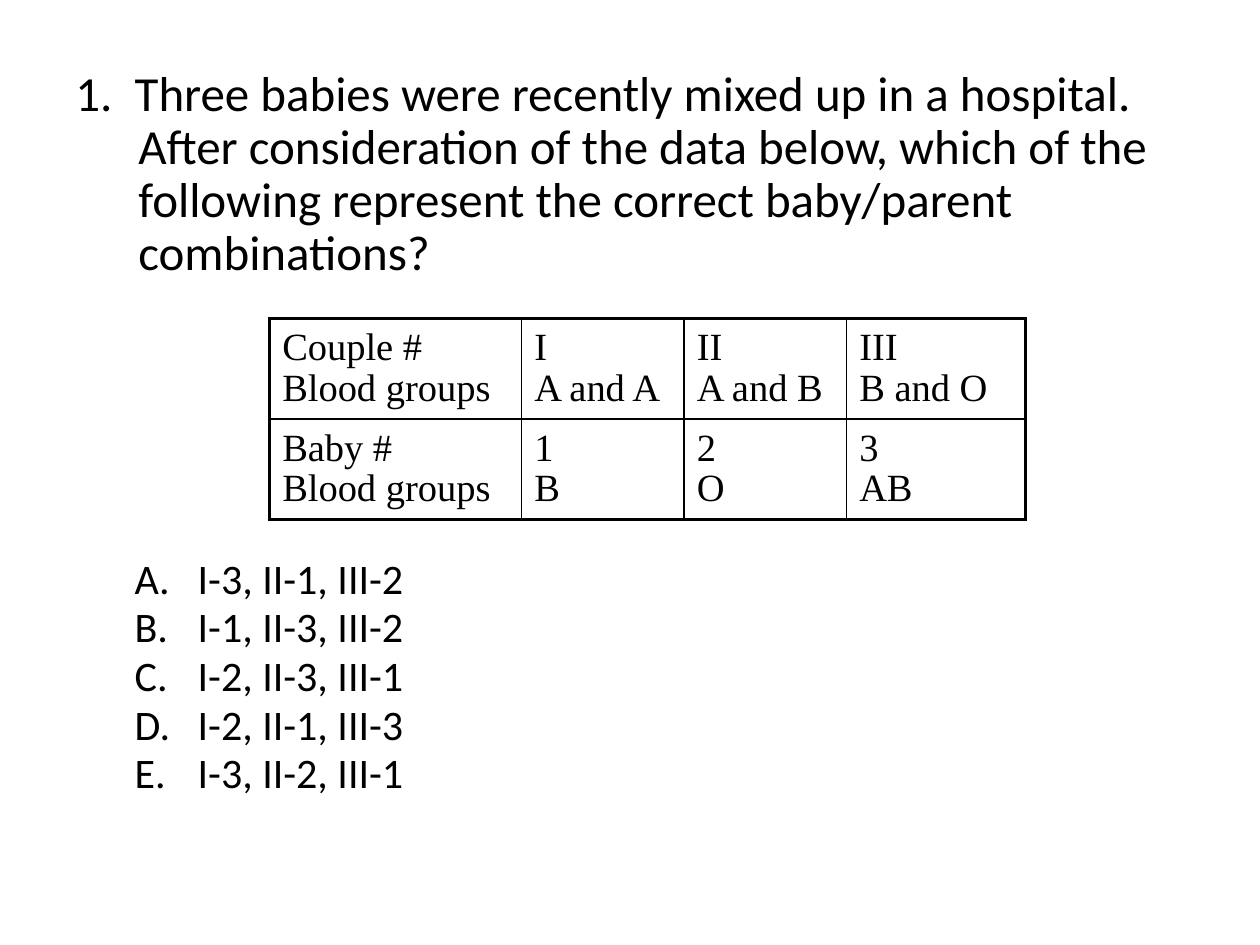
from pptx import Presentation
from pptx.dml.color import RGBColor
from pptx.enum.text import MSO_ANCHOR
from pptx.oxml.ns import qn
from pptx.util import Inches, Pt
from lxml.etree import SubElement

BLACK = RGBColor(0, 0, 0)
THICK, THIN = 2.25, 1

QUESTION = ("1.  Three babies were recently mixed up in a hospital. After consideration "
            "of the data below, which of the following represent the correct "
            "baby/parent combinations?")
ANSWERS = ["I-3, II-1, III-2", "I-1, II-3, III-2", "I-2, II-3, III-1",
           "I-2, II-1, III-3", "I-3, II-2, III-1"]
BLOOD_GROUPS = [
    ["Couple #\nBlood groups", "I\nA and A", "II\nA and B", "III\nB and O"],
    ["Baby #\nBlood groups", "1\nB", "2\nO", "3\nAB"],
]
COLUMN_WIDTHS = [2, 1.29, 1.29, 1.42]
ROW_HEIGHT = 0.74


def format_text(tf, font, size, spacing, before=0):
    for p in tf.paragraphs:
        p.line_spacing = spacing
        p.space_before = Pt(before)
        for r in p.runs:
            r.font.name, r.font.size = font, Pt(size)
            r.font.color.rgb = BLACK


def add_text(slide, box, lines, size, spacing, left, numbering=None):
    tf = slide.shapes.add_textbox(*map(Inches, box)).text_frame
    tf.word_wrap = True
    tf.text = "\n".join(lines)
    format_text(tf, "Calibri", size, spacing, size * 0.2)
    for p in tf.paragraphs:
        pPr = p._p.get_or_add_pPr()
        pPr.set("marL", str(Inches(left)))
        pPr.set("indent", str(Inches(-0.5)))
        if numbering:
            SubElement(pPr, qn("a:buFont"), typeface="+mj-lt")
            SubElement(pPr, qn("a:buAutoNum"), type=numbering)


def set_borders(cell, widths):
    tcPr = cell._tc.get_or_add_tcPr()
    for position, (side, width) in enumerate(widths.items()):
        ln = SubElement(tcPr, qn("a:ln" + side), w=str(Pt(width)))
        fill = SubElement(ln, qn("a:solidFill"))
        SubElement(fill, qn("a:srgbClr"), val=str(BLACK))
        tcPr.remove(ln)
        tcPr.insert(position, ln)  # borders come before the cell fill


prs = Presentation()
prs.slide_width, prs.slide_height = Inches(10), Inches(7.5)
s = prs.slides.add_slide(prs.slide_layouts[6])

# Question and answers
add_text(s, (0.5, 0.5, 8.99, 2.36), [QUESTION], 28, 0.9, 0.5)
add_text(s, (0.34, 4.41, 3.42, 2.74), ANSWERS, 24, 0.8, 1.13, "alphaUcPeriod")

# Blood group table with a thick outer frame
n_rows, n_cols = len(BLOOD_GROUPS), len(COLUMN_WIDTHS)
table = s.shapes.add_table(n_rows, n_cols, Inches(2.14), Inches(2.53),
                           Inches(sum(COLUMN_WIDTHS)),
                           Inches(ROW_HEIGHT * n_rows)).table
table.first_row = table.horz_banding = False
for column, width in zip(table.columns, COLUMN_WIDTHS):
    column.width = Inches(width)
for i, row in enumerate(BLOOD_GROUPS):
    table.rows[i].height = Inches(ROW_HEIGHT)
    for j, text in enumerate(row):
        cell = table.cell(i, j)
        cell.text_frame.text = text
        cell.vertical_anchor = MSO_ANCHOR.MIDDLE
        cell.fill.background()
        format_text(cell.text_frame, "Times New Roman", 22, 0.95)
        outer = {"L": j == 0, "R": j == n_cols - 1, "T": i == 0, "B": i == n_rows - 1}
        set_borders(cell, {side: THICK if edge else THIN for side, edge in outer.items()})

prs.save("out.pptx")
